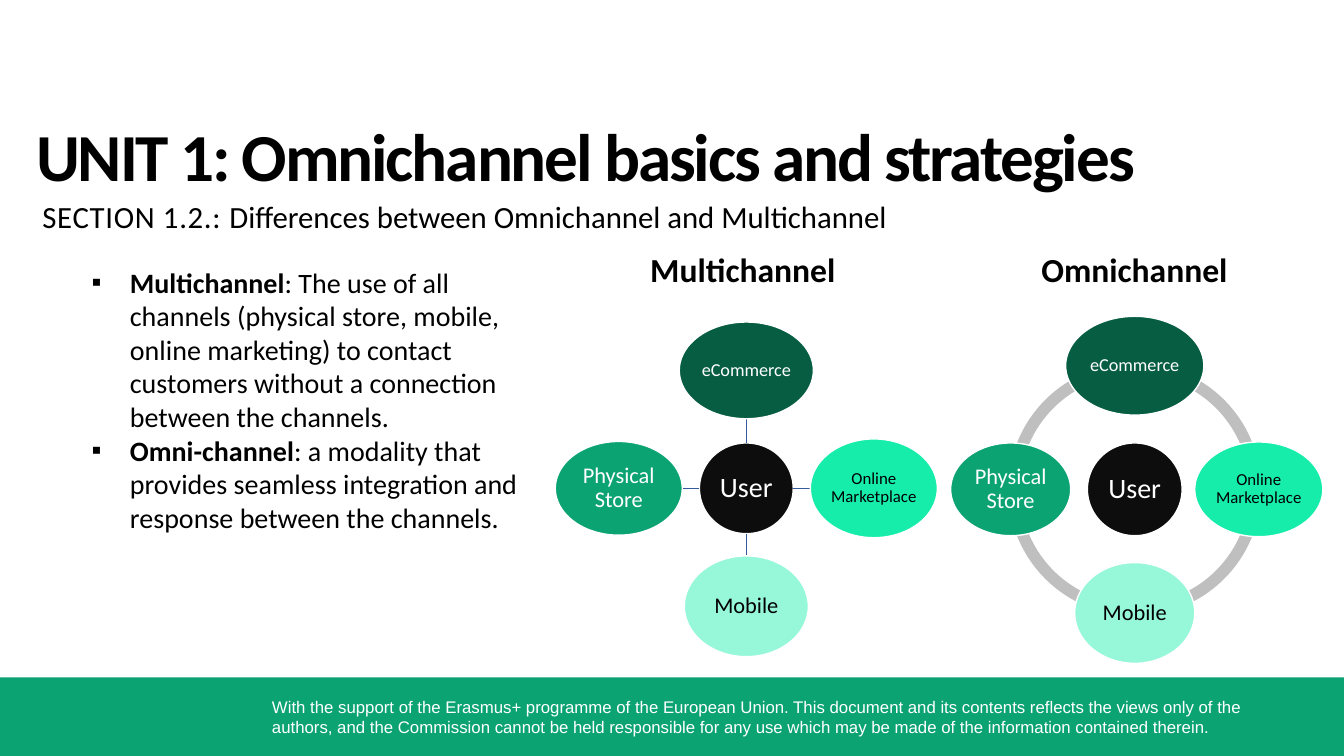
from lxml.etree import SubElement
from pptx import Presentation
from pptx.dml.color import RGBColor
from pptx.enum.shapes import MSO_CONNECTOR, MSO_SHAPE
from pptx.enum.text import MSO_ANCHOR, PP_ALIGN
from pptx.oxml.ns import qn
from pptx.util import Inches, Pt

WIDE, HIGH = Inches(13.33), Inches(7.5)
BLACK = RGBColor(0x00, 0x00, 0x00)
WHITE = RGBColor(0xFF, 0xFF, 0xFF)
COAL = RGBColor(0x0D, 0x0D, 0x0D)
PINE = RGBColor(0x07, 0x5D, 0x42)
GREEN = RGBColor(0x0C, 0xA3, 0x73)
MINT = RGBColor(0x17, 0xED, 0xAB)
PALE = RGBColor(0x97, 0xF7, 0xD9)
GREY = RGBColor(0xBF, 0xBF, 0xBF)
BLUE = RGBColor(0x36, 0x5B, 0x9D)

NODES = [
    ("eCommerce", 13, PINE, WHITE, (0, -1)),
    ("Online Marketplace", 12, MINT, BLACK, (1, 0)),
    ("Mobile", 16, PALE, BLACK, (0, 1)),
    ("Physical Store", 16, GREEN, WHITE, (-1, 0)),
]


def col(share):
    return round(WIDE * share / 100)


def row(share):
    return round(HIGH * share / 100)


def place(x, y, w, h):
    return col(x), row(y), col(w), row(h)


def center(x, y, w, h):
    return place(x - w / 2, y - h / 2, w, h)


def add_run(para, text, size, color, bold=False, face="Calibri", gap=0):
    run = para.add_run()
    run.text = text
    font = run.font
    font.size, font.bold, font.name = Pt(size), bold, face
    font.color.rgb = color
    if gap:
        run._r.get_or_add_rPr().set("spc", str(gap))


def set_pad(frame, side, top, base):
    frame.margin_left = frame.margin_right = Inches(side)
    frame.margin_top, frame.margin_bottom = Inches(top), Inches(base)


def add_text(slide, area, pad=(0.1, 0.05, 0.05)):
    frame = slide.shapes.add_textbox(*place(*area)).text_frame
    frame.word_wrap = True
    set_pad(frame, *pad)
    return frame


def add_form(slide, kind, area, fill, edge=None):
    form = slide.shapes.add_shape(kind, *area)
    form.shadow.inherit = False
    form.fill.solid()
    form.fill.fore_color.rgb = fill
    if edge is None:
        form.line.fill.background()
    else:
        form.line.color.rgb = edge
        form.line.width = Pt(1)
    return form


def add_node(slide, x, y, size, text, points, fill, ink):
    area = center(x, y, *size)
    frame = add_form(slide, MSO_SHAPE.OVAL, area, fill, WHITE).text_frame
    frame.word_wrap = True
    frame.vertical_anchor = MSO_ANCHOR.MIDDLE
    set_pad(frame, 0.01, 0.01, 0.01)
    para = frame.paragraphs[0]
    para.alignment = PP_ALIGN.CENTER
    para.line_spacing = 0.9
    add_run(para, text, points, ink)


def add_spoke(slide, start, end):
    spoke = slide.shapes.add_connector(
        MSO_CONNECTOR.STRAIGHT, col(start[0]), row(start[1]), col(end[0]), row(end[1]))
    spoke.line.color.rgb = BLUE
    spoke.line.width = Pt(1)
    SubElement(spoke._element.spPr, qn("a:effectLst"))


def add_ring(slide, x, y, w, h):
    for turn in range(4):
        arc = add_form(slide, MSO_SHAPE.BLOCK_ARC, center(x, y, w, h), GREY)
        arc.adjustments[0] = turn * 54
        arc.adjustments[1] = (turn + 1) % 4 * 54
        arc.adjustments[2] = 0.046


def add_wheel(slide, x, y, hub, reach, sizes, spokes):
    add_node(slide, x, y, hub, "User", 20, COAL, WHITE)
    for (text, points, fill, ink, (dx, dy)), size in zip(NODES, sizes):
        px, py = x + dx * reach[0], y + dy * reach[1]
        if spokes:
            start = x + dx * hub[0] / 2, y + dy * hub[1] / 2
            end = px - dx * size[0] / 2, py - dy * size[1] / 2
            add_spoke(slide, start, end)
        add_node(slide, px, py, size, text, points, fill, ink)


def add_point(para, term, text):
    props = para._p.get_or_add_pPr()
    props.set("marL", str(Inches(0.38)))
    props.set("indent", str(-Inches(0.38)))
    SubElement(props, qn("a:buFont")).set("typeface", "Arial")
    SubElement(props, qn("a:buChar")).set("char", "▪")
    add_run(para, term, 20, BLACK, bold=True)
    add_run(para, text, 20, BLACK)


def add_foot(slide):
    add_form(slide, MSO_SHAPE.RECTANGLE, place(0, 89.6, 100, 10.4), GREEN)
    frame = add_text(slide, (19.5, 91.47, 78.17, 6.67))
    add_run(frame.paragraphs[0],
            "With the support of the Erasmus+ programme of the European Union. "
            "This document and its contents reflects the views only of the authors, "
            "and the Commission cannot be held responsible for any use which may be "
            "made of the information contained therein.",
            12, WHITE, face="Arial")


def add_heads(slide):
    title = add_text(slide, (2.7, 14.93, 84.25, 10.93), (0, 0.01, 0)).paragraphs[0]
    add_run(title, "UNIT 1: Omnichannel basics and strategies", 48, BLACK,
            bold=True, gap=-150)
    part = add_text(slide, (3.15, 25.87, 67.97, 5.2), (0, 0.02, 0)).paragraphs[0]
    add_run(part, "SECTION 1.2.: ", 22, BLACK, gap=50)
    add_run(part, "Differences between Omnichannel and Multichannel", 22, BLACK)
    for text, x in (("Multichannel", 47.64), ("Omnichannel", 76.74)):
        head = add_text(slide, (x, 32.27, 15.75, 6.67)).paragraphs[0]
        add_run(head, text, 24, BLACK, bold=True)


def add_body(slide):
    frame = add_text(slide, (6.08, 34.4, 34.51, 37.2))
    add_point(frame.paragraphs[0], "Multichannel",
              ": The use of all channels (physical store, mobile, online marketing) "
              "to contact customers without a connection between the channels.")
    add_point(frame.add_paragraph(), "Omni-channel",
              ": a modality that provides seamless integration and response "
              "between the channels.")


def main():
    deck = Presentation()
    deck.slide_width, deck.slide_height = WIDE, HIGH
    slide = deck.slides.add_slide(deck.slide_layouts[6])
    add_foot(slide)
    add_heads(slide)
    add_body(slide)
    add_wheel(slide, 55.53, 64.6, (6.98, 12), (9.49, 15.6),
              [(9.98, 12.8), (9.45, 13.07), (9.23, 13.33), (9.45, 12.4)], True)
    add_ring(slide, 84.43, 64.73, 18.83, 33.47)
    add_wheel(slide, 84.43, 64.73, (7.05, 12.27), (9.23, 16.35),
              [(10.28, 13.07), (9.53, 12.53), (8.93, 13.33), (8.93, 12.27)], False)
    deck.save("out.pptx")


if __name__ == "__main__":
    main()
